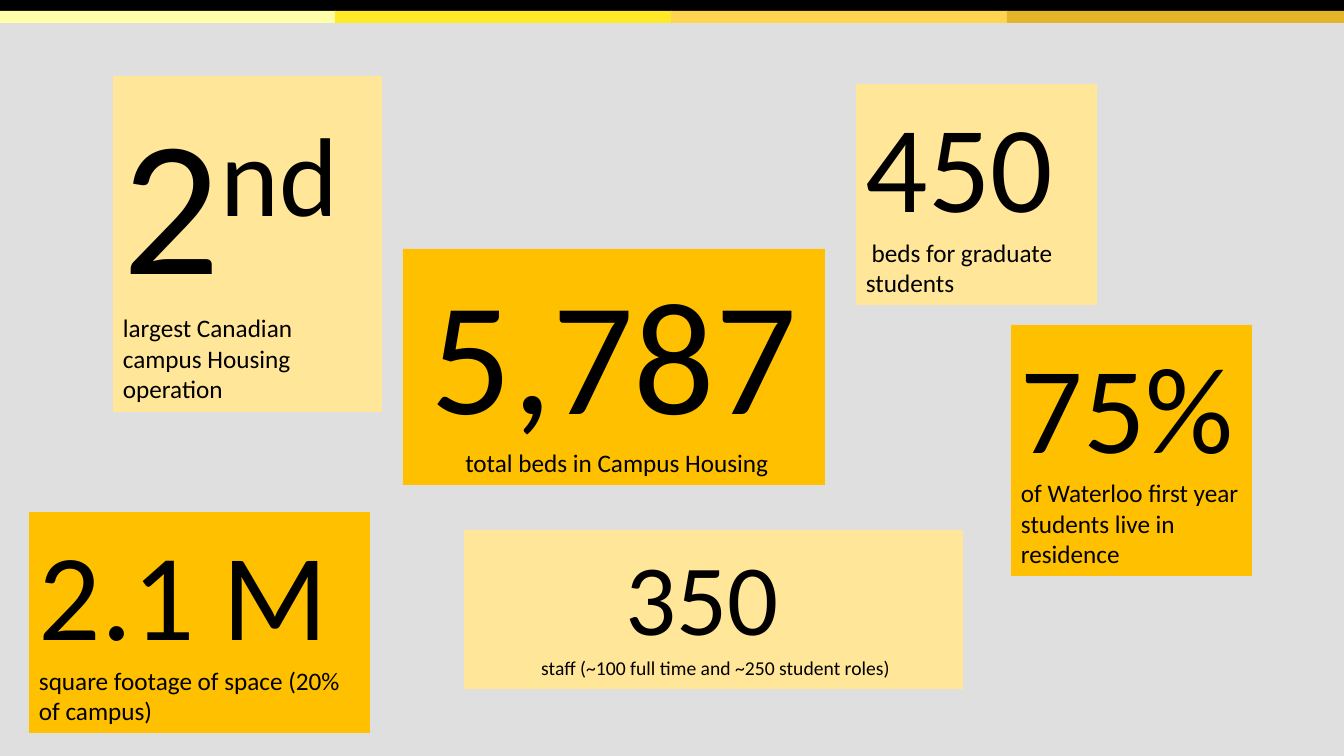
from pptx import Presentation
from pptx.dml.color import RGBColor
from pptx.enum.shapes import MSO_SHAPE
from pptx.enum.text import MSO_AUTO_SIZE, PP_ALIGN
from pptx.util import Pt

PX = 914400 / 100.8
LEFT, CENTER = PP_ALIGN.LEFT, PP_ALIGN.CENTER
RECTANGLE = MSO_SHAPE.RECTANGLE
GROW = MSO_AUTO_SIZE.SHAPE_TO_FIT_TEXT
BLACK = RGBColor(0x00, 0x00, 0x00)
GREY = RGBColor(0xDF, 0xDF, 0xDF)
GOLD = RGBColor(0xFF, 0xC0, 0x00)
CREAM = RGBColor(0xFF, 0xE6, 0x99)
BAND_COLOURS = [
    RGBColor(0xFF, 0xFF, 0xAA),
    RGBColor(0xFF, 0xEA, 0x29),
    RGBColor(0xFF, 0xD5, 0x4F),
    RGBColor(0xE4, 0xB4, 0x29),
]


def px(*lengths):
    """Turn pixel lengths into EMU."""
    return [round(length * PX) for length in lengths]


def add_bar(left, top, width, height, colour):
    bar = page.shapes.add_shape(RECTANGLE, *px(left, top, width, height))
    bar.shadow.inherit = False
    bar.fill.solid()
    bar.fill.fore_color.rgb = colour
    bar.line.fill.background()


deck = Presentation()
deck.slide_width, deck.slide_height = px(1344, 756)
page = deck.slides.add_slide(deck.slide_layouts[6])
page.background.fill.solid()
page.background.fill.fore_color.rgb = GREY

# Top stripe and four colour bands
add_bar(-1, 0, 1346, 13, BLACK)
for index, colour in enumerate(BAND_COLOURS):
    add_bar(index * 336 - 1, 11, 337, 12, colour)

# Each card: place, colour, alignment, then paragraphs of (text, size, baseline)
cards = [
    ((113, 76, 269, 336), CREAM, LEFT,
     [[("2", 138, 0), ("nd", 138, 30000),
       (" largest Canadian campus Housing operation", 18, 0)]]),
    ((403, 249, 422, 236), GOLD, CENTER,
     [[("5,787", 115, 0)], [(" total beds in Campus Housing", 18, 0)]]),
    ((1011, 325, 241, 251), GOLD, LEFT,
     [[("75%", 88, 0),
       (" of Waterloo first year students live in residence", 18, 0)]]),
    ((856, 84, 241, 221), CREAM, LEFT,
     [[("450", 88, 0)], [(" beds for graduate students", 18, 0)]]),
    ((29, 512, 341, 221), GOLD, LEFT,
     [[("2.1 M", 88, 0), (" square footage of space (20% of campus)", 18, 0)]]),
    ((464, 530, 499, 159), CREAM, CENTER,
     [[("350 ", 72, 0)],
      [(" staff (~100 full time and ~250 student roles)", 14, 0)]]),
]

for place, colour, alignment, paragraphs in cards:
    box = page.shapes.add_textbox(*px(*place))
    box.fill.solid()
    box.fill.fore_color.rgb = colour
    frame = box.text_frame
    frame.word_wrap = True
    frame.auto_size = GROW
    for index, spans in enumerate(paragraphs):
        para = frame.add_paragraph() if index else frame.paragraphs[0]
        para.alignment = alignment
        para.font.name = "Calibri"
        para.font.color.rgb = BLACK
        for text, size, baseline in spans:
            span = para.add_run()
            span.text = text
            span.font.size = Pt(size)
            if baseline:
                span._r.get_or_add_rPr().set("baseline", str(baseline))

deck.save("out.pptx")
